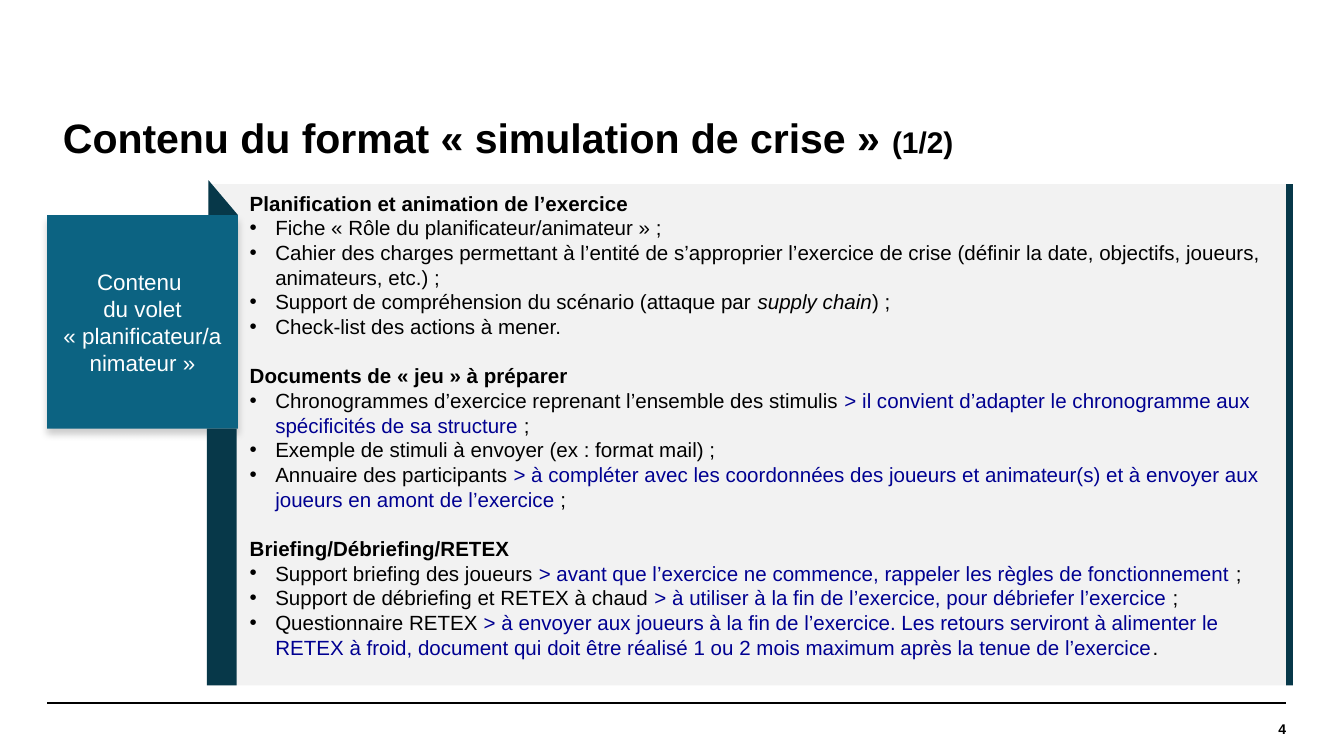
from lxml import etree
from pptx import Presentation
from pptx.dml.color import RGBColor
from pptx.enum.shapes import MSO_CONNECTOR, MSO_SHAPE as Shape
from pptx.enum.text import MSO_ANCHOR as Anchor, PP_ALIGN as Align
from pptx.oxml import parse_xml
from pptx.oxml.ns import nsdecls, qn
from pptx.util import Inches, Pt

COLORS = {"black": "000000", "white": "FFFFFF", "panel": "F2F2F2",
          "label": "0C6382", "fold": "073849", "advice": "000091"}
FONT = "Arial"
HARD_SPACE = chr(160)
TITLE = [("Contenu du format « simulation de crise » ", 22), ("(1/2)", 16)]
PAGE = "4"
LABEL = ["Contenu ", "du volet « planificateur/animateur »"]
SECTIONS = [
    ("Planification et animation de l’exercice", [
        [("Fiche « Rôle du planificateur/animateur » ;", "plain")],
        [("Cahier des charges permettant à l’entité de s’approprier l’exercice de crise "
          "(définir la date, objectifs, joueurs, animateurs, etc.) ;", "plain")],
        [("Support de compréhension du scénario (attaque par ", "plain"),
         ("supply chain", "italic"), (") ;", "plain")],
        [("Check-list des actions à mener.", "plain")],
    ]),
    ("Documents de « jeu » à préparer", [
        [("Chronogrammes d’exercice reprenant l’ensemble des stimulis ", "plain"),
         ("> il convient d’adapter le chronogramme aux spécificités de sa structure", "advice"),
         (" ;", "plain")],
        [("Exemple de stimuli à envoyer (ex : format mail) ;", "plain")],
        [("Annuaire des participants ", "plain"),
         ("> à compléter avec les coordonnées des joueurs et animateur(s) et à envoyer aux "
          "joueurs en amont de l’exercice", "advice"),
         (" ;", "plain")],
    ]),
    ("Briefing/Débriefing/RETEX", [
        [("Support briefing des joueurs ", "plain"),
         ("> avant que l’exercice ne commence, rappeler les règles de fonctionnement", "advice"),
         (" ;", "plain")],
        [("Support de débriefing et RETEX à chaud ", "plain"),
         ("> à utiliser à la fin de l’exercice, pour débriefer l’exercice", "advice"),
         (" ;", "plain")],
        [("Questionnaire RETEX ", "plain"),
         ("> à envoyer aux joueurs à la fin de l’exercice. Les retours serviront à alimenter le "
          "RETEX à froid, document qui doit être réalisé 1 ou 2 mois maximum après la tenue de "
          "l’exercice", "advice"),
         (".", "plain")],
    ]),
]

LEFT, RIGHT = 0.35, 9.57
PANEL_LEFT, PANEL_TOP, PANEL_HEIGHT = 1.55, 1.37, 3.73
LABEL_TOP, LABEL_WIDTH, LABEL_HEIGHT = 1.6, 1.42, 1.59
LABEL_BOTTOM = LABEL_TOP + LABEL_HEIGHT
PANEL_BOTTOM = PANEL_TOP + PANEL_HEIGHT
FOOTER = 5.23

prs = Presentation()
prs.slide_width = Inches(10)
prs.slide_height = prs.slide_width * 9 // 16
slide = prs.slides.add_slide(prs.slide_layouts[6])


def rgb(name):
    return RGBColor.from_string(COLORS[name])


def glue_quotes(text):
    return text.replace("« ", "«" + HARD_SPACE).replace(" »", HARD_SPACE + "»")


def add_run(paragraph, text, size, color="black", bold=False, italic=False):
    run = paragraph.add_run()
    run.text = text
    font = run.font
    font.name, font.size, font.bold, font.italic = FONT, Pt(size), bold, italic
    font.color.rgb = rgb(color)


def add_block(kind, color, *place):
    block = slide.shapes.add_shape(kind, *map(Inches, place))
    block.shadow.inherit = False
    block.fill.solid()
    block.fill.fore_color.rgb = rgb(color)
    block.line.fill.background()
    return block


def add_text(anchor, *place):
    frame = slide.shapes.add_textbox(*map(Inches, place)).text_frame
    frame.word_wrap = True
    frame.vertical_anchor = anchor
    return frame


def next_paragraph(frame):
    first = frame.paragraphs[0]
    return frame.add_paragraph() if first.runs else first


def add_bullet(paragraph):
    props = paragraph._p.get_or_add_pPr()
    props.set("marL", str(Inches(0.19)))
    props.set("indent", str(-Inches(0.19)))
    etree.SubElement(props, qn("a:buFont")).set("typeface", FONT)
    etree.SubElement(props, qn("a:buChar")).set("char", "•")


rule = slide.shapes.add_connector(
    MSO_CONNECTOR.STRAIGHT, *map(Inches, (LEFT, FOOTER, RIGHT, FOOTER)))
rule.line.color.rgb = rgb("black")
rule.line.width = Pt(0.8)
etree.SubElement(rule._element.spPr, qn("a:effectLst"))

heading = add_text(Anchor.MIDDLE, LEFT, 0.75, 9.21, 0.59).paragraphs[0]
heading.line_spacing = 0.9
heading._p.get_or_add_pPr().set("marL", str(Inches(0.02)))
for text, size in TITLE:
    add_run(heading, text, size, bold=True)

page_frame = add_text(Anchor.MIDDLE, RIGHT - 1.48, FOOTER, 1.48, 0.39)
page_frame.margin_left = page_frame.margin_right = 0
page_frame.margin_top = page_frame.margin_bottom = 0
page_frame.paragraphs[0].alignment = Align.RIGHT
add_run(page_frame.paragraphs[0], PAGE, 7.5, bold=True)

add_block(Shape.RECTANGLE, "panel", PANEL_LEFT, PANEL_TOP, RIGHT - PANEL_LEFT, PANEL_HEIGHT)

label = add_block(Shape.RECTANGLE, "label", LEFT, LABEL_TOP, LABEL_WIDTH, LABEL_HEIGHT)
label._element.spPr.find(qn("a:effectLst")).append(parse_xml(
    f'<a:outerShdw {nsdecls("a")} blurRad="{Pt(4)}" dist="{Pt(3)}" dir="5400000">'
    f'<a:srgbClr val="{COLORS["black"]}"><a:alpha val="20000"/></a:srgbClr></a:outerShdw>'))
label.text_frame.word_wrap = True
label.text_frame.vertical_anchor = Anchor.MIDDLE
for text in LABEL:
    line = next_paragraph(label.text_frame)
    line.alignment = Align.CENTER
    add_run(line, glue_quotes(text), 12, "white")

add_block(Shape.RIGHT_TRIANGLE, "fold", PANEL_LEFT, 1.34, 0.22, LABEL_TOP - 1.34)
add_block(Shape.RECTANGLE, "fold", RIGHT, PANEL_TOP, 0.05, PANEL_HEIGHT)
add_block(Shape.RECTANGLE, "fold", 1.54, LABEL_BOTTOM, 0.22, PANEL_BOTTOM - LABEL_BOTTOM)

STYLES = {"plain": {}, "italic": {"italic": True}, "advice": {"color": "advice"}}
body = add_text(Anchor.TOP, 1.76, PANEL_TOP, 7.8, 3.8)
for number, (section, items) in enumerate(SECTIONS):
    section_head = next_paragraph(body)
    if number:
        section_head.space_before = Pt(13.2)
    add_run(section_head, glue_quotes(section), 11, bold=True)
    for item in items:
        entry = next_paragraph(body)
        add_bullet(entry)
        for text, style in item:
            add_run(entry, glue_quotes(text), 11, **STYLES[style])

prs.save("out.pptx")
